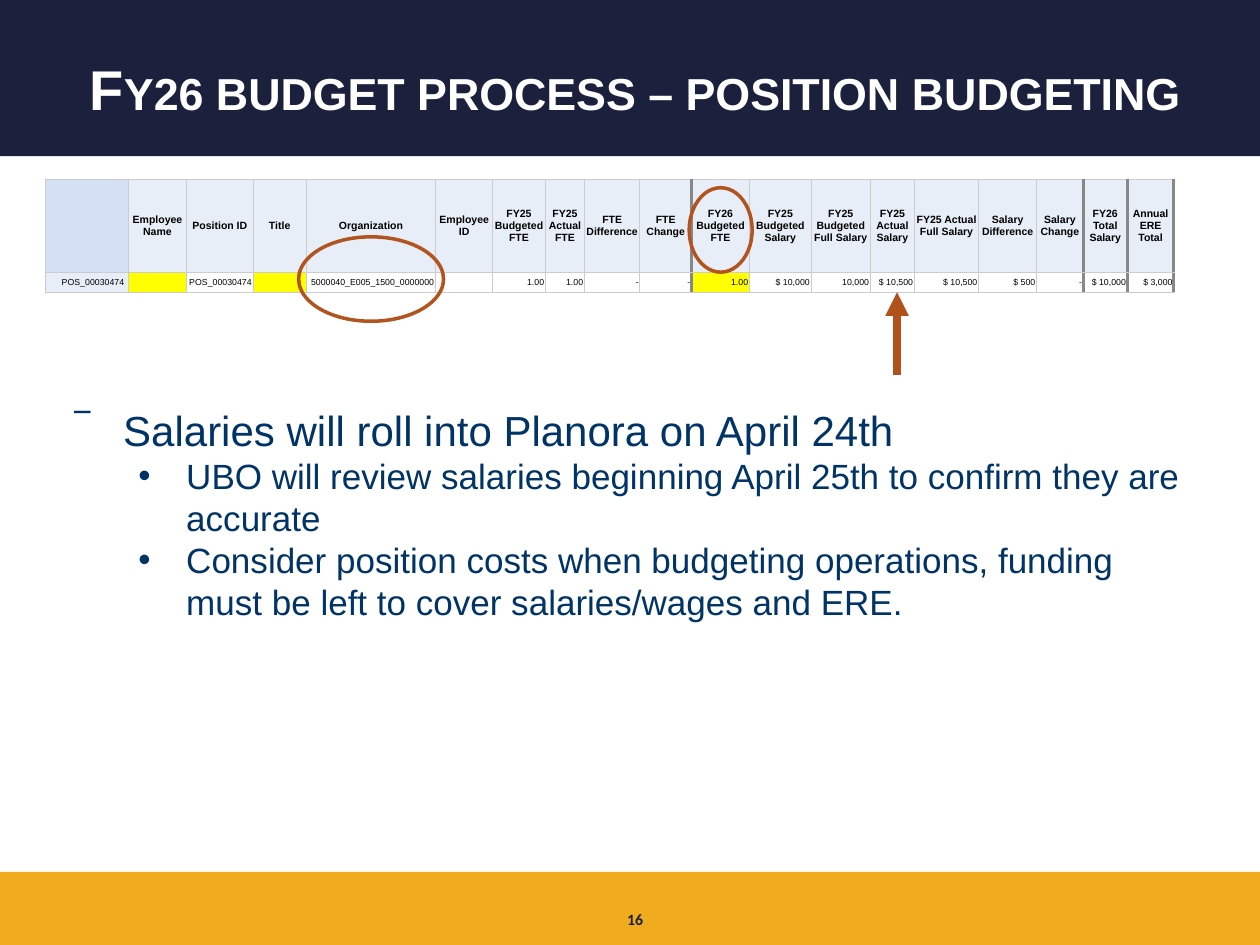
import pptx
import pptx.util
import pptx.dml.color
import pptx.enum.shapes
import pptx.enum.text
import pptx.oxml
import pptx.oxml.ns
import lxml.etree

Inches = pptx.util.Inches
Pt = pptx.util.Pt
qn = pptx.oxml.ns.qn
SHAPE = pptx.enum.shapes.MSO_SHAPE
ALIGN = pptx.enum.text.PP_ALIGN
MIDDLE = pptx.enum.text.MSO_ANCHOR.MIDDLE


def rgb(color):
    return pptx.dml.color.RGBColor.from_string(color)


def write(p, text, size=18, color="000000", bold=False, font="Arial", align=ALIGN.LEFT):
    p.alignment = align
    if not text:
        lxml.etree.SubElement(p._p, qn("a:endParaRPr"), sz=str(size * 100))
        return None
    r = p.add_run()
    r.text = text
    r.font.size = Pt(size)
    r.font.bold = bold
    r.font.name = font
    r.font.color.rgb = rgb(color)
    return r


prs = pptx.Presentation()
prs.slide_width = Inches(10)
prs.slide_height = Inches(7.5)
s = prs.slides.add_slide(prs.slide_layouts[6])

for top, height, color in [(6.92, 0.58, "F1AB1F"), (0, 1.24, "1B203D")]:
    sp = s.shapes.add_shape(SHAPE.RECTANGLE, 0, Inches(top), Inches(10), Inches(height))
    sp.shadow.inherit = False
    sp.fill.solid()
    sp.fill.fore_color.rgb = rgb(color)
    sp.line.fill.background()

tf = s.shapes.add_textbox(Inches(0.5), Inches(0.16), Inches(9.08), Inches(1.08)).text_frame
tf.word_wrap = True
tf.vertical_anchor = MIDDLE
r = write(tf.paragraphs[0], "Fy26 budget process – position budgeting",
          size=32, color="FFFFFF", bold=True, align=ALIGN.CENTER)
r.font._element.set("cap", "small")

tf = s.shapes.add_textbox(Inches(4), Inches(7.17), Inches(2.08), Inches(0.33)).text_frame
tf.word_wrap = True
write(tf.paragraphs[0], "16", size=9, color="1B203D", bold=True, font="Calibri", align=ALIGN.CENTER)

columns = [
    (0.66, "", "POS_00030474"),
    (0.46, "Employee Name", ""),
    (0.53, "Position ID", "POS_00030474"),
    (0.42, "Title", ""),
    (1.03, "Organization", "5000040_E005_1500_0000000"),
    (0.45, "Employee ID", ""),
    (0.42, "FY25 Budgeted FTE", "1.00"),
    (0.31, "FY25 Actual FTE", "1.00"),
    (0.44, "FTE Difference", "-"),
    (0.41, "FTE Change", "-"),
    (0.46, "FY26 Budgeted FTE", "1.00"),
    (0.49, "FY25 Budgeted Salary", "$ 10,000"),
    (0.47, "FY25 Budgeted Full Salary", "10,000"),
    (0.35, "FY25 Actual Salary", "$ 10,500"),
    (0.51, "FY25 Actual Full Salary", "$ 10,500"),
    (0.46, "Salary Difference", "$ 500"),
    (0.37, "Salary Change", "-"),
    (0.35, "FY26 Total Salary", "$ 10,000"),
    (0.37, "Annual ERE Total", "$ 3,000"),
]
thick_right = {9, 16, 17, 18}
yellow = {1, 3, 10}
blue_text = {9, 16}

table = s.shapes.add_table(2, len(columns), Inches(0.36), Inches(1.42), Inches(8.95), Inches(0.9)).table
table.horz_banding = False
table.rows[0].height = Inches(0.74)
table.rows[1].height = Inches(0.16)
for j, (width, *texts) in enumerate(columns):
    table.columns[j].width = Inches(width)
    for i, text in enumerate(texts):
        cell = table.cell(i, j)
        cell.vertical_anchor = MIDDLE
        cell.margin_left = Inches(0.13 if (i, j) == (1, 0) else 0.01)
        cell.margin_right = cell.margin_top = Inches(0.01)
        cell.margin_bottom = 0
        if i == 0:
            fill = "E8EEF7" if j else "D6E0F4"
            write(cell.text_frame.paragraphs[0], text, size=6, bold=True, align=ALIGN.CENTER)
        else:
            fill = "E8EEF7" if j == 0 else "FFFF00" if j in yellow else "FFFFFF"
            write(cell.text_frame.paragraphs[0], text, size=5,
                  color="0000FF" if j in blue_text else "000000",
                  align=ALIGN.RIGHT if j else ALIGN.LEFT)
        for side in "LRTB":
            thick = (side == "R" and j in thick_right) or (side == "L" and j - 1 in thick_right)
            ln = lxml.etree.SubElement(cell._tc.get_or_add_tcPr(), qn("a:ln" + side),
                                       w=str(Pt(2 if thick else 0.5)))
            solid = lxml.etree.SubElement(ln, qn("a:solidFill"))
            lxml.etree.SubElement(solid, qn("a:srgbClr"), val="888888" if thick else "CCCCCC")
        cell.fill.solid()
        cell.fill.fore_color.rgb = rgb(fill)

for left, top, width in [(5.47, 1.49, 0.5), (2.37, 1.88, 1.15)]:
    sp = s.shapes.add_shape(SHAPE.OVAL, Inches(left), Inches(top), Inches(width), Inches(0.67))
    sp.shadow.inherit = False
    sp.fill.background()
    sp.line.color.rgb = rgb("B1541F")
    sp.line.width = Pt(2)

tf = s.shapes.add_textbox(0, Inches(3.16), Inches(9.5), Inches(1.85)).text_frame
tf.word_wrap = True
points = [
    (1, 0.88, "‾", 24, "Salaries will roll into Planora on April 24th"),
    (2, 1.38, "•", 20, "UBO will review salaries beginning April 25th to confirm they are accurate"),
    (2, 1.38, "•", 20, "Consider position costs when budgeting operations, funding must be left "
                       "to cover salaries/wages and ERE."),
]
for i, (level, margin, bullet, size, text) in enumerate(points):
    p = tf.add_paragraph() if i else tf.paragraphs[0]
    p.level = level
    write(p, text, size=size, color="003366")
    pPr = p._p.get_or_add_pPr()
    pPr.set("marL", str(Inches(margin)))
    pPr.set("indent", str(Inches(-0.38)))
    lxml.etree.SubElement(pPr, qn("a:buFont"), typeface="Arial")
    lxml.etree.SubElement(pPr, qn("a:buChar"), char=bullet)

arrow = s.shapes.add_connector(pptx.enum.shapes.MSO_CONNECTOR.STRAIGHT,
                               Inches(7.12), Inches(2.98), Inches(7.12), Inches(2.32))
arrow.line.color.rgb = rgb("B1511B")
arrow.line.width = Pt(4.5)
lxml.etree.SubElement(arrow.line._get_or_add_ln(), qn("a:tailEnd"), type="triangle")
lxml.etree.SubElement(arrow._element.spPr, qn("a:effectLst"))

prs.save("out.pptx")
